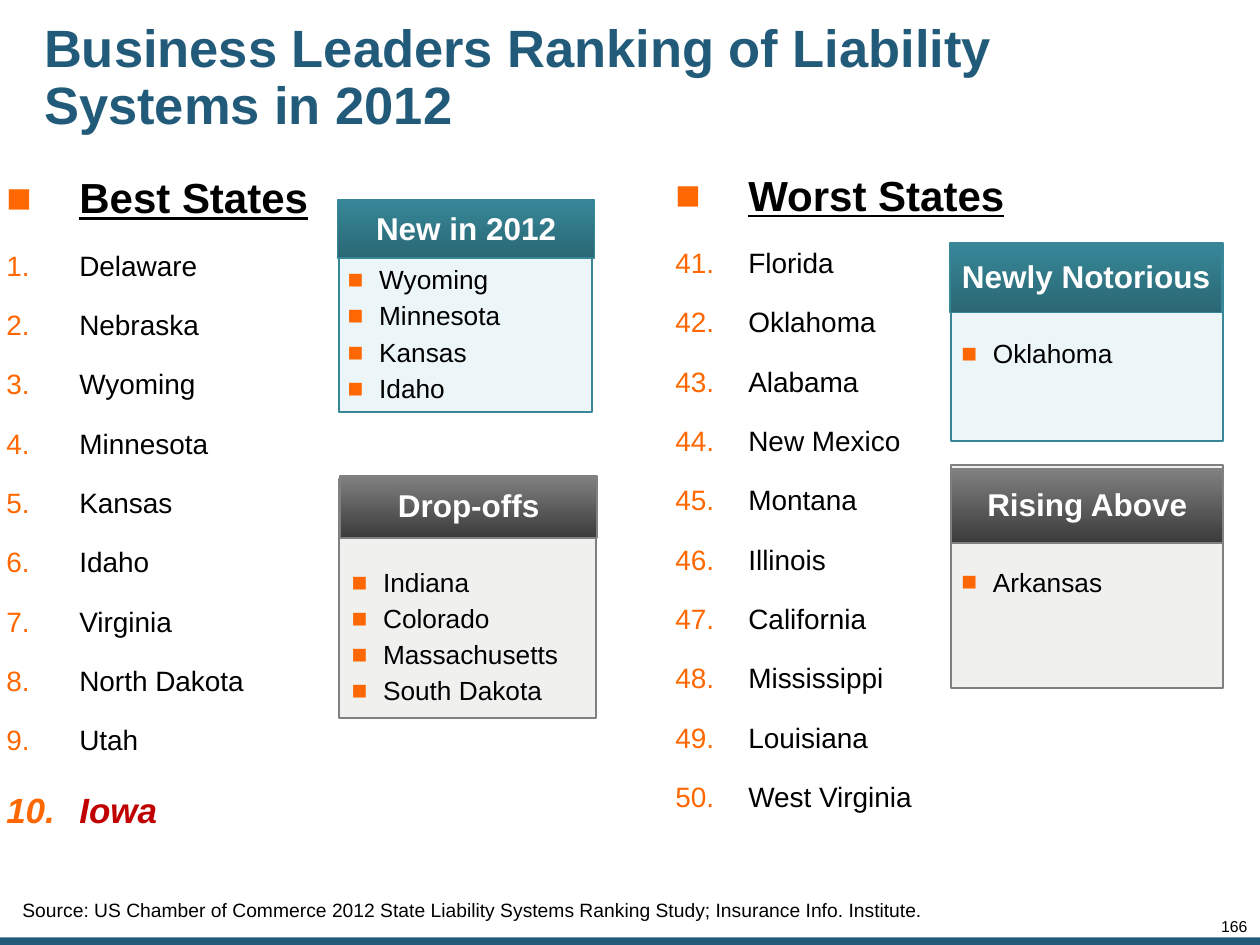
from lxml.etree import SubElement
from pptx import Presentation
from pptx.dml.color import RGBColor
from pptx.enum.shapes import MSO_SHAPE
from pptx.enum.text import MSO_ANCHOR, PP_ALIGN
from pptx.oxml.ns import qn
from pptx.util import Inches, Pt

NAVY, ORANGE, BLACK, WHITE, RED = "225A7A", "FF6801", "000000", "FFFFFF", "C00000"
TEAL = ("378798", "2A6774", "ECF6F8")
GRAY = ("808080", "3B3B3B", "F0F1EF")
BEST = ["Delaware", "Nebraska", "Wyoming", "Minnesota", "Kansas", "Idaho",
        "Virginia", "North Dakota", "Utah", "Iowa"]
WORST = ["Florida", "Oklahoma", "Alabama", "New Mexico", "Montana", "Illinois",
         "California", "Mississippi", "Louisiana", "West Virginia"]
CARDS = [
    (TEAL, "New in 2012", BEST[2:6],
     (2.69, 1.59, 2.01, 1.68), (2.68, 1.59, 2.04, 0.46), (2.71, 2.07, 2, 1.2)),
    (GRAY, "Drop-offs", ["Indiana", "Colorado", "Massachusetts", "South Dakota"],
     (2.69, 3.8, 2.04, 1.9), (2.7, 3.78, 2.04, 0.49), (2.74, 4.47, 1.98, 1.49)),
    (TEAL, "Newly Notorious", ["Oklahoma"],
     (7.55, 1.93, 2.16, 1.57), (7.54, 1.93, 2.16, 0.55), (7.58, 2.66, 2.11, 0.33)),
    (GRAY, "Rising Above", ["Arkansas"],
     (7.55, 3.69, 2.16, 1.77), (7.55, 3.72, 2.16, 0.59), (7.58, 4.47, 2.09, 0.33)),
]


def color(code):
    return RGBColor.from_string(code)


def place(box):
    return [Inches(n) for n in box]


def frame(shape, pad=0.05, wrap=True, anchor=MSO_ANCHOR.TOP):
    text = shape.text_frame
    text.word_wrap = wrap
    text.vertical_anchor = anchor
    text.margin_left = text.margin_right = Inches(pad)
    text.margin_top = text.margin_bottom = Inches(min(pad, 0.05))
    return text


def add_run(para, words, size, tint=BLACK, bold=False, italic=False, under=False):
    run = para.add_run()
    run.text = words
    font = run.font
    font.name, font.size = "Arial", Pt(size)
    font.bold, font.italic, font.underline = bold, italic, under
    font.color.rgb = color(tint)


def mark(para, indent, start=None):
    props = para._p.get_or_add_pPr()
    props.set("marL", str(Inches(indent)))
    props.set("indent", str(-Inches(indent)))
    SubElement(SubElement(props, qn("a:buClr")), qn("a:srgbClr")).set("val", ORANGE)
    SubElement(props, qn("a:buFont")).set("typeface", "Arial")
    if start is None:
        SubElement(props, qn("a:buChar")).set("char", "■")
    else:
        auto = SubElement(props, qn("a:buAutoNum"))
        auto.set("type", "arabicPeriod")
        auto.set("startAt", str(start))


def add_item(text, first, indent, gap, start=None):
    para = text.paragraphs[0] if first else text.add_paragraph()
    mark(para, indent, start)
    para.line_spacing = 0.9
    if not first:
        para.space_before = Pt(gap)
    return para


def add_rank(slide, box, head, states, start, star=None):
    text = frame(slide.shapes.add_textbox(*place(box)))
    add_run(add_item(text, True, 0.58, 0), head, 24, bold=True, under=True)
    for state in states:
        hot = state == star
        size = 20 if hot else 16
        para = add_item(text, False, 0.58, size * 1.04, start)
        add_run(para, state, size, RED if hot else BLACK, hot, hot)


def add_rect(slide, box, line=None):
    shape = slide.shapes.add_shape(MSO_SHAPE.RECTANGLE, *place(box))
    shape.shadow.inherit = False
    if line:
        shape.line.color.rgb = color(line)
        shape.line.width = Pt(1)
    else:
        shape.line.fill.background()
    return shape


def fill_flat(shape, code):
    shape.fill.solid()
    shape.fill.fore_color.rgb = color(code)


def fill_fade(shape, codes):
    shape.fill.gradient()
    shape.fill.gradient_angle = 270
    for stop, code, spot in zip(shape.fill.gradient_stops, codes, (0, 1)):
        stop.color.rgb = color(code)
        stop.position = spot


def add_card(slide, tones, head, states, body, bar, area):
    top, low, pale = tones
    fill_flat(add_rect(slide, body, top), pale)
    band = add_rect(slide, bar, top)
    fill_fade(band, (top, low))
    para = frame(band, anchor=MSO_ANCHOR.MIDDLE).paragraphs[0]
    para.alignment = PP_ALIGN.CENTER
    para.line_spacing = 0.95 if tones is TEAL else 0.9
    add_run(para, head, 18, WHITE, True)
    text = frame(slide.shapes.add_textbox(*place(area)))
    for spot, state in enumerate(states):
        add_run(add_item(text, spot == 0, 0.25, 4.5), state, 15)


def add_title(slide, box, words):
    title = slide.shapes.title
    title.left, title.top, title.width, title.height = place(box)
    para = frame(title, anchor=MSO_ANCHOR.MIDDLE).paragraphs[0]
    para.alignment = PP_ALIGN.LEFT
    para.line_spacing = 0.9
    add_run(para, words, 30, NAVY, True)


def add_note(slide, box, words, size, pad, wrap, align):
    para = frame(slide.shapes.add_textbox(*place(box)), pad, wrap).paragraphs[0]
    para.alignment = align
    add_run(para, words, size)


def main():
    deck = Presentation()
    deck.slide_width, deck.slide_height = Inches(10), Inches(7.5)
    slide = deck.slides.add_slide(deck.slide_layouts[5])
    fill_flat(add_rect(slide, (0, 7.44, 10, 0.06)), NAVY)
    add_title(slide, (0.3, 0, 7.75, 1.25),
              "Business Leaders Ranking of Liability Systems in 2012")
    add_rank(slide, (0, 1.36, 4.17, 5), "Best States", BEST, 1, "Iowa")
    add_rank(slide, (5.31, 1.34, 4.17, 5), "Worst States", WORST, 41)
    add_note(slide, (0.08, 7.08, 7.43, 0.29),
             "Source: US Chamber of Commerce 2012 State Liability Systems "
             "Ranking Study; Insurance Info. Institute.",
             11, 0.1, False, PP_ALIGN.LEFT)
    for card in CARDS:
        add_card(slide, *card)
    add_note(slide, (9.41, 7.28, 0.49, 0.13), "166", 9, 0, True, PP_ALIGN.RIGHT)
    deck.save("out.pptx")


if __name__ == "__main__":
    main()
